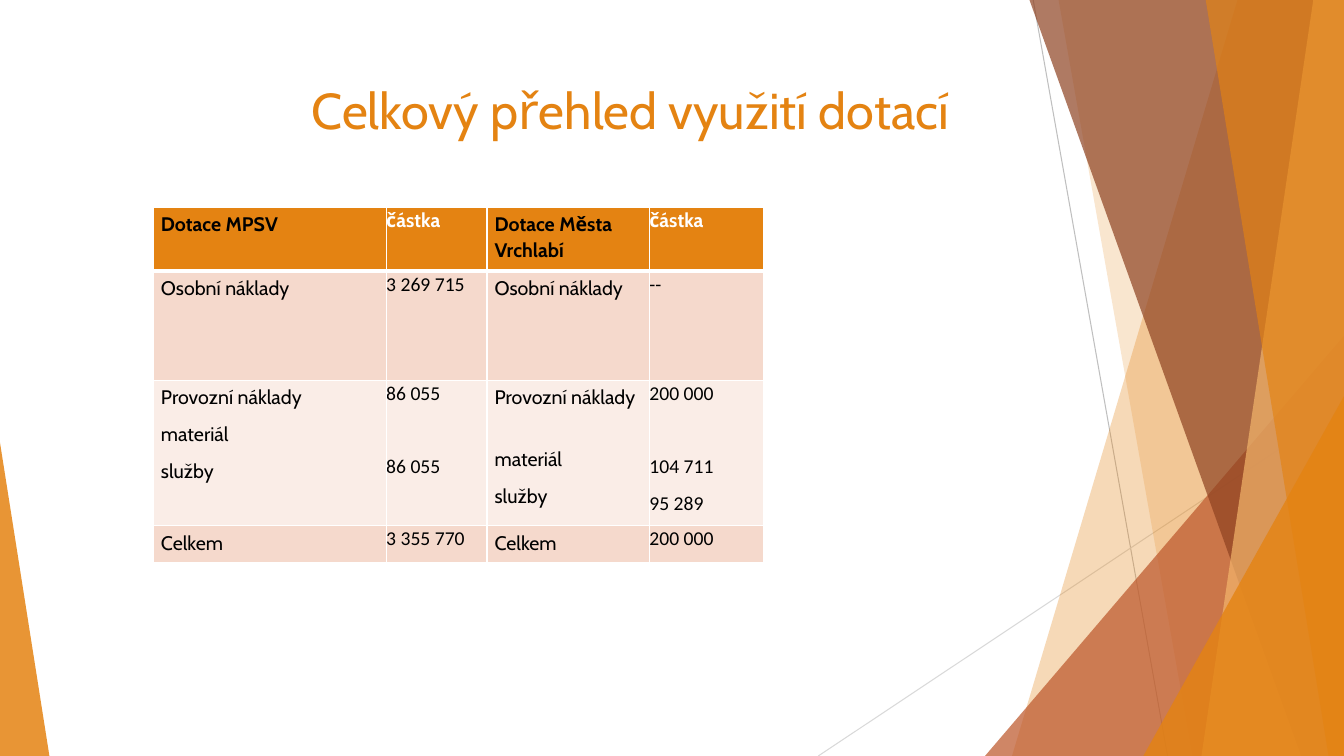
from pptx import Presentation
from pptx.dml.color import RGBColor
from pptx.enum.shapes import MSO_CONNECTOR, MSO_SHAPE
from pptx.enum.text import MSO_ANCHOR, PP_ALIGN
from pptx.oxml.ns import qn
from pptx.util import Pt
from lxml.etree import SubElement

# Content
TITLE = "Celkový přehled využití dotací"
HEADER = ["Dotace MPSV", "částka", "Dotace Města Vrchlabí", "částka"]
# Each cell holds its lines; a (text, gap) pair adds space after the line
ROWS = [
    [["Osobní náklady"], ["3 269 715"], ["Osobní náklady"], ["--"]],
    [["Provozní náklady", "materiál", "služby"],
     [("86 055", 26), "86 055"],
     [("Provozní náklady", 18), "materiál", "služby"],
     [("200 000", 26), "104 711", "95 289"]],
    [["Celkem"], ["3 355 770"], ["Celkem"], ["200 000"]],
]
COL_WIDTHS = [166.3, 72, 116, 81.4]
ROW_HEIGHTS = [46, 77.8, 103.7, 26.6]

# Look
WIDTH, HEIGHT, TOP = 960, 540, -0.75
ORANGE, WHITE, BLACK = "E48312", "FFFFFF", "000000"
BANDS = ["F5D9CC", "FAEDE7"]

# Background decoration
LINES = [(738, 0, 834, 540, "BFBFBF"), (960, 290, 584.5, 540, "D9D9D9")]
# Strips run to the right edge: left x at top, left x at bottom, colour, opacity
# Triangles: left, top, width, apex position, colour, opacity
DECOR = [
    ("strip", 884.2, 722.9, ORANGE, 30),
    ("strip", 756, 851.8, ORANGE, 20),
    ("triangle", 703.6, 239.8, 256.4, 1, "BD582C", 72),
    ("strip", 735.1, 929.5, "8E4221", 70),
    ("strip", 938.2, 858.2, "F3B56C", 70),
    ("strip", 861.1, 949, ORANGE, 65),
    ("triangle", 816.7, 283, 143.3, 1, ORANGE, 80),
    ("triangle", 0, 316.2, 35.3, 0, ORANGE, 85),
]


def rgb(hex_color):
    return RGBColor.from_string(hex_color)


def finish_decor(sp, color, opacity):
    sp.shadow.inherit = False
    sp.fill.solid()
    sp.fill.fore_color.rgb = rgb(color)
    sp.line.fill.background()
    clr = sp.fill._xPr.find(qn("a:solidFill"))[0]
    SubElement(clr, qn("a:alpha"), val=str(opacity * 1000))


def set_font(p, name, size, color, bold=False):
    f = p.font
    f.name, f.size, f.bold = name, Pt(size), bold
    f.color.rgb = rgb(color)


def set_borders(cell, **widths):
    tcPr = cell._tc.get_or_add_tcPr()
    for side in "LRTB":
        ln = SubElement(tcPr, qn("a:ln" + side), w=str(Pt(widths.get(side, 1))))
        fill = SubElement(ln, qn("a:solidFill"))
        SubElement(fill, qn("a:srgbClr"), val=WHITE)


prs = Presentation()
prs.slide_width, prs.slide_height = Pt(WIDTH), Pt(HEIGHT)
s = prs.slides.add_slide(prs.slide_layouts[6])

# Thin lines
for x1, y1, x2, y2, color in LINES:
    c = s.shapes.add_connector(MSO_CONNECTOR.STRAIGHT, Pt(x1), Pt(y1), Pt(x2), Pt(y2))
    c.line.color.rgb = rgb(color)
    c.line.width = Pt(0.75)
    SubElement(c._element.spPr, qn("a:effectLst"))

# Translucent strips and triangles
for kind, *geometry, color, opacity in DECOR:
    if kind == "strip":
        x_top, x_bottom = geometry
        fb = s.shapes.build_freeform(Pt(x_top), Pt(TOP))
        corners = [(WIDTH, TOP), (WIDTH, HEIGHT), (x_bottom, HEIGHT)]
        fb.add_line_segments([(Pt(x), Pt(y)) for x, y in corners])
        sp = fb.convert_to_shape()
    else:
        x, y, w, apex = geometry
        sp = s.shapes.add_shape(MSO_SHAPE.ISOSCELES_TRIANGLE,
                                Pt(x), Pt(y), Pt(w), Pt(HEIGHT - y))
        sp.adjustments[0] = apex
    finish_decor(sp, color, opacity)

# Title
tf = s.shapes.add_textbox(Pt(102.2), Pt(52.6), Pt(696.2), Pt(82)).text_frame
tf.word_wrap = True
tf.vertical_anchor = MSO_ANCHOR.TOP
p = tf.paragraphs[0]
p.text = TITLE
p.alignment = PP_ALIGN.CENTER
set_font(p, "Cabin", 36, ORANGE)

# Table
rows = [[[text] for text in HEADER]] + ROWS
table = s.shapes.add_table(len(rows), len(HEADER), Pt(109.6), Pt(147.8),
                           Pt(sum(COL_WIDTHS)), Pt(sum(ROW_HEIGHTS))).table
table.first_row = table.horz_banding = False
for col, w in zip(table.columns, COL_WIDTHS):
    col.width = Pt(w)
for row, h in zip(table.rows, ROW_HEIGHTS):
    row.height = Pt(h)

for i, row in enumerate(rows):
    is_header = i == 0
    for j, lines in enumerate(row):
        cell = table.cell(i, j)
        is_amount = j % 2 == 1
        cell.margin_left = cell.margin_right = Pt(0 if is_amount else 5.4)
        cell.margin_top = cell.margin_bottom = Pt(0 if is_amount else 2.9)
        set_borders(cell, B=3 if is_header else 1, T=3 if i == 1 else 1)
        cell.fill.solid()
        cell.fill.fore_color.rgb = rgb(ORANGE if is_header else BANDS[(i - 1) % 2])
        for k, line in enumerate(lines):
            text, gap = line if isinstance(line, tuple) else (line, 0)
            tf = cell.text_frame
            p = tf.add_paragraph() if k else tf.paragraphs[0]
            p.text = text
            p.line_spacing = 1.07
            p.space_after = Pt(8 + gap)
            set_font(p, "Calibri" if is_amount and not is_header else "Cabin", 14,
                     WHITE if is_header and is_amount else BLACK, is_header)

prs.save("out.pptx")
